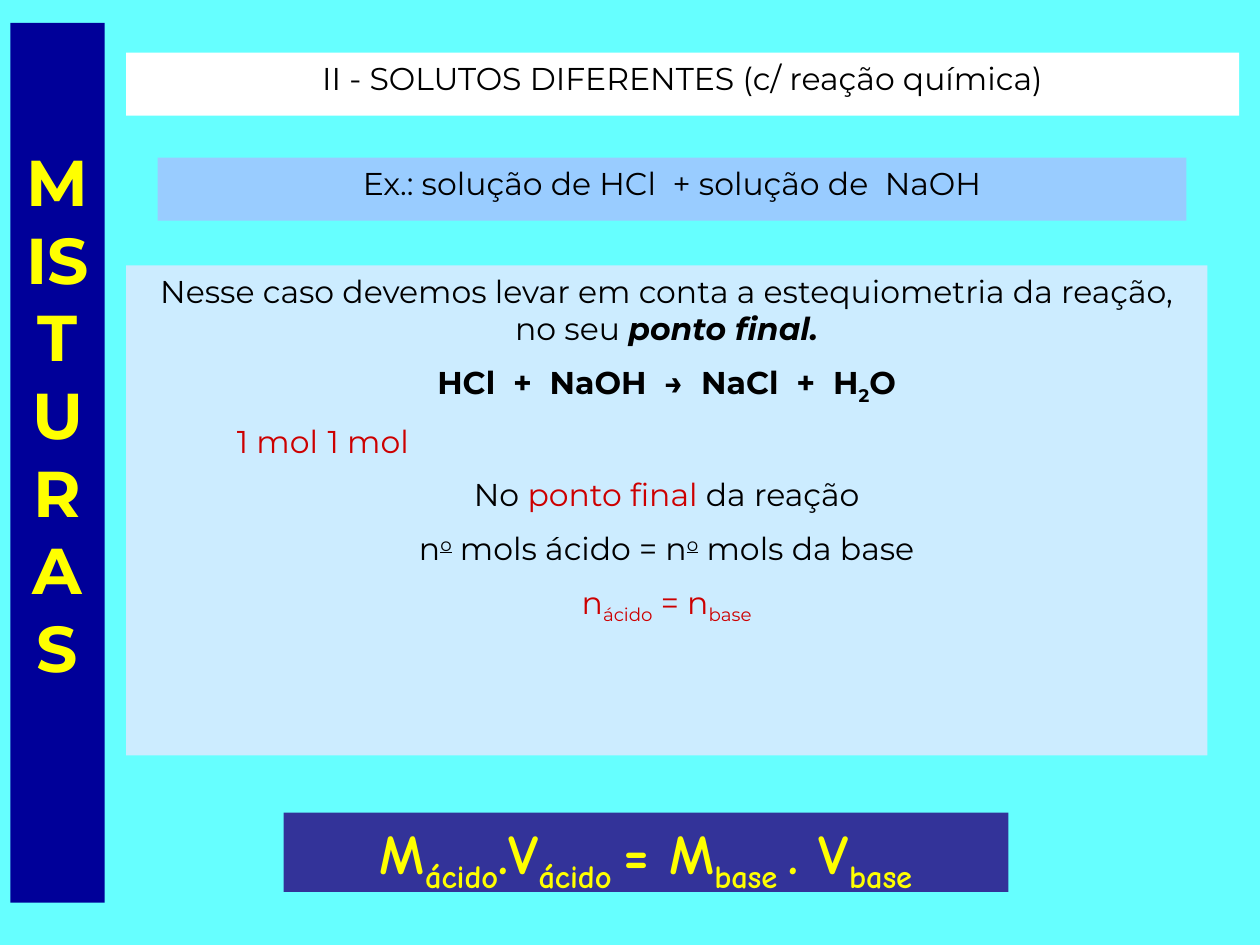
from lxml import etree
from pptx import Presentation
from pptx import util as u
from pptx.dml import color as dml
from pptx.enum import shapes, text
from pptx.oxml import ns

BLACK, RED, YELLOW = "000000", "CC0000", "FFFF00"
SUBSCRIPT, SUPERSCRIPT = -25000, 30000


def rgb(value):
    return dml.RGBColor.from_string(value)


def write(paragraph, words, font="Montserrat", size=18, color=BLACK,
          bold=False, italic=False, underline=False, baseline=0):
    run = paragraph.add_run()
    run.text = words
    run.font.name = font
    run.font.size = u.Pt(size)
    run.font.color.rgb = rgb(color)
    run.font.bold = bold
    run.font.italic = italic
    run.font.underline = underline
    if baseline:
        run.font._element.set("baseline", str(baseline))


presentation = Presentation()
presentation.slide_width, presentation.slide_height = u.Cm(25.4), u.Cm(19.05)
slide = presentation.slides.add_slide(presentation.slide_layouts[1])
slide.background.fill.solid()
slide.background.fill.fore_color.rgb = rgb("66FFFF")

# Text of each panel: paragraphs made of (words, format) runs
bold, red = {"bold": True}, {"color": RED}
ordinal = ("o", {"underline": True, "baseline": SUPERSCRIPT})
red_subscript = {"color": RED, "baseline": SUBSCRIPT}
formula = {"font": "Comic Neue", "size": 32, "color": YELLOW, "bold": True}
formula_subscript = {**formula, "baseline": SUBSCRIPT}

heading_text = [[("II - SOLUTOS DIFERENTES (c/ reação química)", {})]]
example_text = [[("Ex.: solução de HCl  + solução de  NaOH", {})]]
explanation_text = [
    [("Nesse caso devemos levar em conta a estequiometria da reação, no seu ", {}),
     ("ponto final.", {"bold": True, "italic": True})],
    [("HCl  +  NaOH  →  NaCl  +  H", bold),
     ("2", {"bold": True, "baseline": SUBSCRIPT}), ("O", bold)],
    [("1 mol\t1 mol", red)],
    [("No ", {}), ("ponto final", red), (" da reação", {})],
    [("n", {}), ordinal, (" mols ácido = n", {}), ordinal, (" mols da base", {})],
    [("n", red), ("ácido", red_subscript), (" = n", red), ("base", red_subscript)],
]
formula_text = [[
    ("M", formula), ("ácido", formula_subscript),
    (".V", formula), ("ácido ", formula_subscript),
    ("= M", formula), ("base ", formula_subscript),
    (". V", formula), ("base", formula_subscript),
]]
banner_text = [[("MISTURAS", {"size": 37, "color": YELLOW, "bold": True})]]

# Panels: placeholders for title and list, rectangles for the rest
heading, explanation = slide.shapes.title, slide.placeholders[1]
example, formula_box, banner = [
    slide.shapes.add_shape(shapes.MSO_SHAPE.RECTANGLE, 0, 0, 0, 0) for _ in range(3)
]
panels = [
    (heading, "FFFFFF", (2.54, 1.06, 22.44, 1.27), heading_text),
    (example, "99CCFF", (3.18, 3.18, 20.74, 1.27), example_text),
    (explanation, "CCECFF", (2.54, 5.35, 21.8, 9.88), explanation_text),
    (formula_box, "333399", (5.72, 16.38, 14.61, 1.6), formula_text),
    (banner, "000099", (0.21, 0.46, 1.9, 17.74), banner_text),
]
for shape, fill, box, paragraphs in panels:
    shape.left, shape.top, shape.width, shape.height = [u.Cm(n) for n in box]
    shape.fill.solid()
    shape.fill.fore_color.rgb = rgb(fill)
    shape.line.fill.background()
    if not shape.is_placeholder:
        shape.shadow.inherit = False
    frame = shape.text_frame
    frame.word_wrap = True
    frame.auto_size = text.MSO_AUTO_SIZE.NONE
    frame.vertical_anchor = text.MSO_ANCHOR.TOP
    for index, runs in enumerate(paragraphs):
        paragraph = frame.add_paragraph() if index else frame.paragraphs[0]
        paragraph.alignment = text.PP_ALIGN.CENTER
        paragraph.space_before = u.Pt(9 if index else 0)
        for words, style in runs:
            write(paragraph, words, **style)

# The banner's letters start below its top edge
banner.text_frame.margin_top = u.Cm(2.4)

# No bullets in the explanation
for paragraph in explanation.text_frame.paragraphs:
    properties = paragraph._p.get_or_add_pPr()
    properties.set("marL", "0")
    properties.set("indent", "0")
    etree.SubElement(properties, ns.qn("a:buNone"))

# The mole counts stand on an indent and a tab stop
moles = explanation.text_frame.paragraphs[2]
moles.alignment = text.PP_ALIGN.LEFT
properties = moles._p.get_or_add_pPr()
properties.set("indent", str(u.Cm(1.98)))
tabs = etree.SubElement(properties, ns.qn("a:tabLst"))
etree.SubElement(tabs, ns.qn("a:tab"), pos=str(u.Cm(4.28)), algn="l")

presentation.save("out.pptx")
